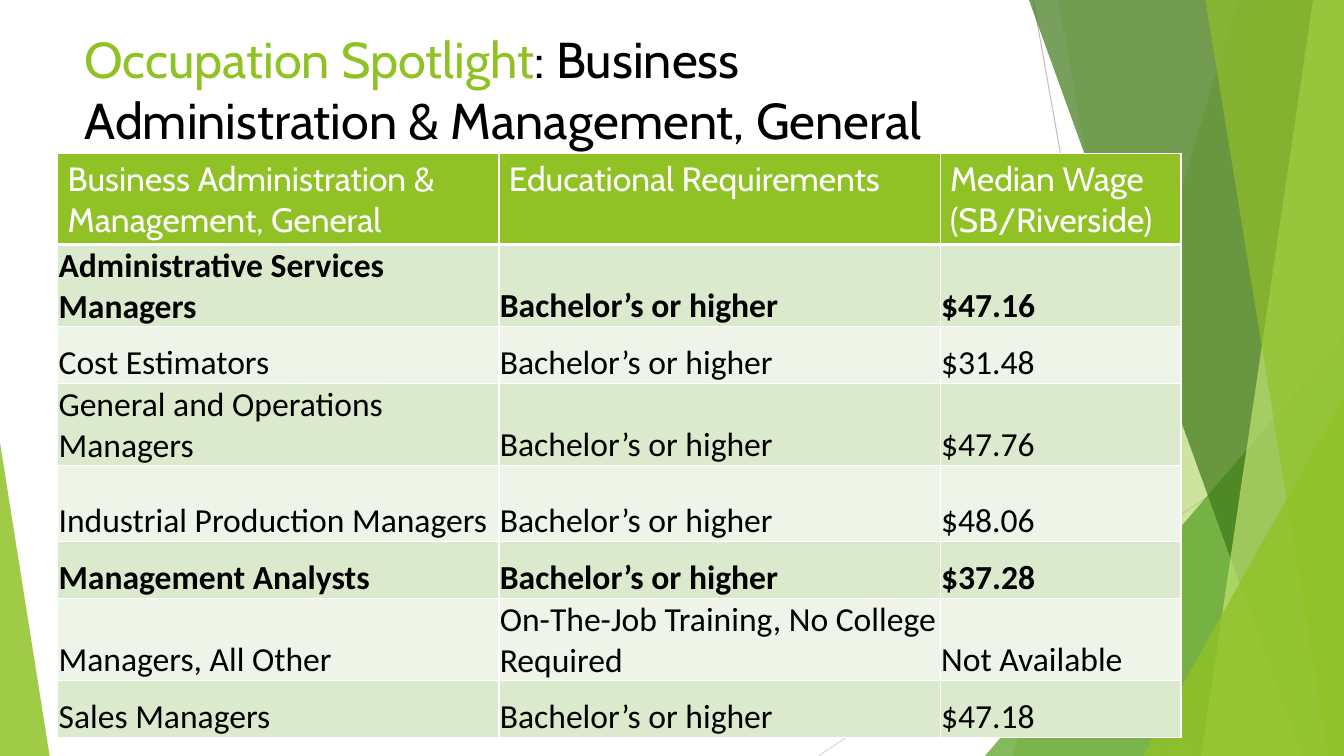
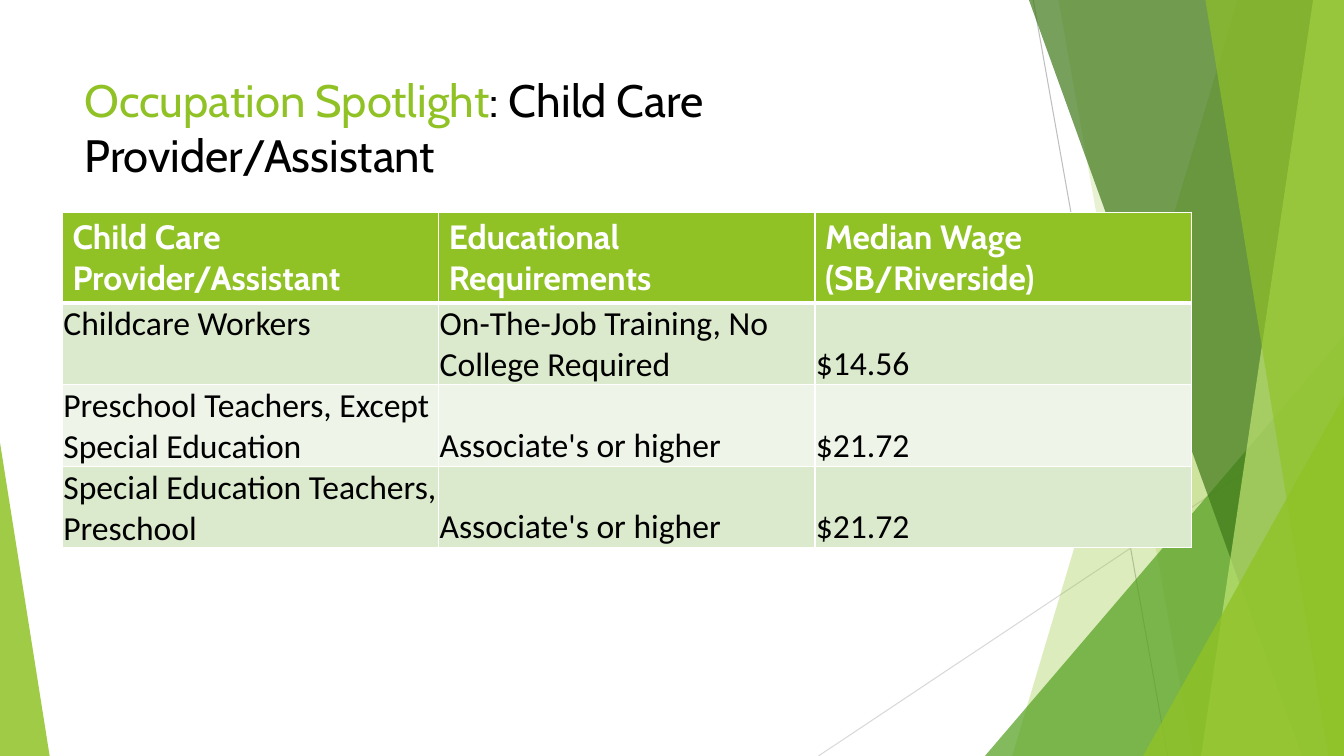
from dataclasses import dataclass

import lxml.etree
import pptx
import pptx.dml.color
import pptx.enum.shapes
import pptx.enum.text
import pptx.oxml.ns
import pptx.util

Pt = pptx.util.Pt
qn = pptx.oxml.ns.qn


@dataclass(frozen=True)
class Theme:
    """Hold the colours, fonts and type sizes shared by the slides."""

    lime: str = "90C226"
    green: str = "54A021"
    forest: str = "3F7819"
    pale_lime: str = "C0E474"
    band_dark: str = "DBE9CD"
    band_light: str = "EEF4E8"
    rule_dark: str = "BFBFBF"
    rule_light: str = "D9D9D9"
    white: str = "FFFFFF"
    black: str = "000000"
    heading_font: str = "Cabin"
    body_font: str = "Calibri"
    table_size: float = 24
    title_size: float = 36
    small_title_size: float = 32.4


class Deck:
    """Build slides in one style, keeping track of the current slide."""

    width, height = 960, 540

    def __init__(self, theme):
        """Start an empty presentation."""
        self.theme = theme
        self.presentation = pptx.Presentation()
        self.presentation.slide_width = Pt(self.width)
        self.presentation.slide_height = Pt(self.height)
        self.slide = None

    def add_slide(self):
        """Add a blank slide with the shared ribbons."""
        self.slide = self.presentation.slides.add_slide(self.presentation.slide_layouts[6])
        theme = self.theme
        self.line(738, 0, 834, 540, theme.rule_dark)
        self.line(960, 290, 584.6, 540, theme.rule_light)
        self.ribbon(884, 723, theme.lime, 30)
        self.ribbon(756, 852, theme.lime, 20)
        self.triangle(703.5, 240, 256.5, 1, theme.green, 72)
        self.ribbon(735, 930, theme.forest, 70)
        self.ribbon(938, 858, theme.pale_lime, 70)
        self.ribbon(861, 949, theme.lime, 65)
        self.triangle(816.5, 283, 143.5, 1, theme.lime, 80)
        self.triangle(0, 316, 35.5, 0, theme.lime, 85)

    def colour(self, code):
        """Turn a hex code into a colour."""
        return pptx.dml.color.RGBColor.from_string(code)

    def paint(self, shape, code, opacity):
        """Give a shape a translucent fill without line or shadow."""
        shape.shadow.inherit = False
        shape.line.fill.background()
        shape.fill.solid()
        shape.fill.fore_color.rgb = self.colour(code)
        colour_element = shape.fill._xPr.find(".//" + qn("a:srgbClr"))
        lxml.etree.SubElement(colour_element, qn("a:alpha"), val=str(opacity * 1000))

    def line(self, x1, y1, x2, y2, code):
        """Draw a thin straight line."""
        connector = self.slide.shapes.add_connector(
            pptx.enum.shapes.MSO_CONNECTOR.STRAIGHT, Pt(x1), Pt(y1), Pt(x2), Pt(y2))
        connector.line.color.rgb = self.colour(code)
        connector.line.width = Pt(0.75)
        lxml.etree.SubElement(connector._element.spPr, qn("a:effectLst"))

    def ribbon(self, top_x, bottom_x, code, opacity):
        """Draw a full-height ribbon reaching the right edge."""
        builder = self.slide.shapes.build_freeform(Pt(top_x), 0)
        corners = [(self.width, 0), (self.width, self.height), (bottom_x, self.height)]
        builder.add_line_segments([(Pt(x), Pt(y)) for x, y in corners], close=True)
        self.paint(builder.convert_to_shape(), code, opacity)

    def triangle(self, left, top, width, apex, code, opacity):
        """Draw a triangle standing on the bottom edge."""
        shape = self.slide.shapes.add_shape(
            pptx.enum.shapes.MSO_SHAPE.ISOSCELES_TRIANGLE,
            Pt(left), Pt(top), Pt(width), Pt(self.height - top))
        shape.adjustments[0] = apex
        self.paint(shape, code, opacity)

    def style(self, font, name, size, code, bold=False):
        """Set the font of a run or paragraph."""
        font.name, font.size, font.bold = name, Pt(size), bold
        font.color.rgb = self.colour(code)

    def title(self, subject, top, width, size):
        """Write the spotlight title with its coloured lead."""
        shape = self.slide.shapes.add_textbox(Pt(53.3), Pt(top), Pt(width), Pt(104))
        shape.text_frame.word_wrap = True
        paragraph = shape.text_frame.paragraphs[0]
        parts = [("Occupation Spotlight", self.theme.lime), (f": {subject}", self.theme.black)]
        for text, code in parts:
            run = paragraph.add_run()
            run.text = text
            self.style(run.font, self.theme.heading_font, size, code)

    def borders(self, cell, top, bottom):
        """Draw white cell borders with given top and bottom widths."""
        properties = cell._tc.get_or_add_tcPr()
        for side, width in (("L", 1), ("R", 1), ("T", top), ("B", bottom)):
            border = lxml.etree.SubElement(properties, qn(f"a:ln{side}"), w=str(Pt(width)))
            fill = lxml.etree.SubElement(border, qn("a:solidFill"))
            lxml.etree.SubElement(fill, qn("a:srgbClr"), val=self.theme.white)

    def cell(self, cell, text, row, bold):
        """Fill and style one header or body cell."""
        theme = self.theme
        header = row == 0
        self.borders(cell, 3 if row == 1 else 1, 3 if header else 1)
        cell.fill.solid()
        band = theme.band_dark if row % 2 else theme.band_light
        cell.fill.fore_color.rgb = self.colour(theme.lime if header else band)
        if not header:
            cell.margin_left = cell.margin_right = cell.margin_top = Pt(0.7)
            cell.margin_bottom = 0
            cell.vertical_anchor = pptx.enum.text.MSO_ANCHOR.BOTTOM
        cell.text_frame.text = text
        name, code = ((theme.heading_font, theme.white) if header
                      else (theme.body_font, theme.black))
        for paragraph in cell.text_frame.paragraphs:
            self.style(paragraph.font, name, theme.table_size, code, bold)

    def table(self, left, top, widths, heights, rows, bold_rows):
        """Add a banded table and return it."""
        table = self.slide.shapes.add_table(
            len(rows), len(widths), Pt(left), Pt(top), Pt(sum(widths)), Pt(sum(heights))).table
        table.horz_banding = False
        for column, width in zip(table.columns, widths):
            column.width = Pt(width)
        for index, (height, texts) in enumerate(zip(heights, rows)):
            table.rows[index].height = Pt(height)
            for position, text in enumerate(texts):
                self.cell(table.cell(index, position), text, index, index in bold_rows)
        return table


def main():
    """Build and save the two spotlight slides."""
    theme = Theme()
    deck = Deck(theme)
    bachelor = "Bachelor’s or higher"
    associate = "Associate's or higher"
    training = "On-The-Job Training, No College Required"
    education = "Educational Requirements"

    deck.add_slide()
    deck.title("Business Administration & Management, General", 16.6, 677, theme.title_size)
    deck.table(41.2, 109.8, [315.2, 315.2, 172], [61, 55, 41, 55, 54.5, 41, 55, 41], [
        ("Business Administration & Management, General", education,
         "Median Wage\n(SB/Riverside)"),
        ("Administrative Services Managers", bachelor, "$47.16"),
        ("Cost Estimators", bachelor, "$31.48"),
        ("General and Operations Managers", bachelor, "$47.76"),
        ("Industrial Production Managers", bachelor, "$48.06"),
        ("Management Analysts", bachelor, "$37.28"),
        ("Managers, All Other", training, "Not Available"),
        ("Sales Managers", bachelor, "$47.18"),
    ], bold_rows={1, 5})

    deck.add_slide()
    deck.title("Child Care Provider/Assistant", 48.2, 667, theme.small_title_size)
    table = deck.table(44.6, 151.6, [268.8] * 3, [44] * 4, [
        ("Child Care Provider/Assistant", education, "Median Wage (SB/Riverside)"),
        ("Childcare Workers", training, "$14.56"),
        ("Preschool Teachers, Except Special Education", associate, "$21.72"),
        ("Special Education Teachers, Preschool", associate, "$21.72"),
    ], bold_rows={0})
    table.cell(1, 0).vertical_anchor = pptx.enum.text.MSO_ANCHOR.TOP

    deck.presentation.save("out.pptx")


if __name__ == "__main__":
    main()
